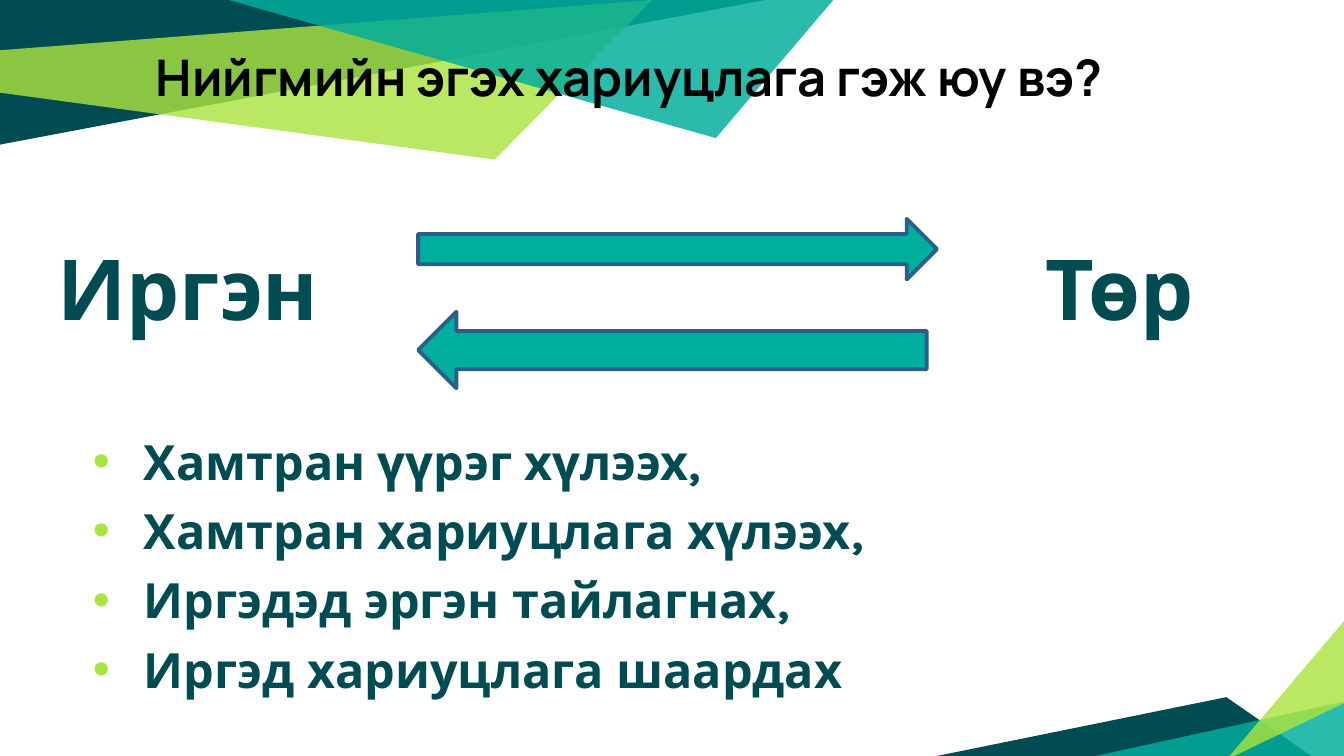
from dataclasses import dataclass

from lxml import etree
from pptx import Presentation
from pptx.dml.color import RGBColor
from pptx.enum.shapes import MSO_SHAPE
from pptx.enum.text import MSO_ANCHOR, MSO_AUTO_SIZE, PP_ALIGN
from pptx.oxml.ns import qn
from pptx.util import Pt

ARROW = MSO_SHAPE.RIGHT_ARROW
CENTER, LEFT = PP_ALIGN.CENTER, PP_ALIGN.LEFT
TOP, MIDDLE = MSO_ANCHOR.TOP, MSO_ANCHOR.MIDDLE
NO_FIT = MSO_AUTO_SIZE.NONE

COLORS = {
    "dark": "004C52",
    "teal": "00AE9D",
    "lime": "ABE33F",
    "outline": "2B5F8A",
    "black": "000000",
}


@dataclass
class Box:
    left: float
    top: float
    width: float
    height: float


@dataclass
class Facet:
    color: str
    opacity: int
    points: list


@dataclass
class Arrow:
    box: Box
    rotation: int


@dataclass
class Label:
    text: str
    box: Box


FACETS = [
    Facet("dark", 100, [(0, 0), (0, 77.5), (410, 0)]),
    Facet("lime", 81, [(-0.5, 27), (0, 49.7), (265, 85.5), (349.5, 0)]),
    Facet("dark", 100, [(502, 405), (702.5, 405), (657, 373.5)]),
    Facet("teal", 83, [(721.5, 375.5), (721.5, 407), (578, 407)]),
    Facet("lime", 81, [(721.5, 376), (721.5, 331), (657, 407)]),
    Facet("teal", 83, [(122.5, 0), (383.5, 74), (447, -0.7), (438.5, 0)]),
]
ARROWS = [
    Arrow(Box(224, 117.2, 278, 32.5), 0),
    Arrow(Box(224, 167, 272.5, 41), 180),
]
LABELS = [
    Label("Иргэн ", Box(-31, 119.5, 275, 70.5)),
    Label("Төр", Box(462.3, 119.5, 275, 70.5)),
]
DUTIES = [
    "Хамтран үүрэг хүлээх,",
    "Хамтран хариуцлага хүлээх,",
    "Иргэдэд эргэн тайлагнах,",
    "Иргэд хариуцлага шаардах",
]


def rgb(name: str) -> RGBColor:
    return RGBColor.from_string(COLORS[name])


def place(sp, box: Box) -> None:
    sp.left, sp.top = Pt(box.left), Pt(box.top)
    sp.width, sp.height = Pt(box.width), Pt(box.height)


def set_frame(tf, anchor) -> None:
    tf.word_wrap = True
    tf.auto_size = NO_FIT
    tf.vertical_anchor = anchor
    tf.margin_left = tf.margin_right = Pt(7.2)
    tf.margin_top = tf.margin_bottom = Pt(7.2)


def write(p, text: str, font: str, size: float, color: str, align) -> None:
    p.text = text
    p.alignment = align
    p.font.name, p.font.size, p.font.bold = font, Pt(size), True
    p.font.color.rgb = rgb(color)


def add_bullet(p, color: str, indent: float) -> None:
    pPr = p._p.get_or_add_pPr()
    pPr.set("marL", str(Pt(indent)))
    pPr.set("indent", str(-Pt(indent)))
    # Bullet elements precede the default run properties
    bu_clr = etree.Element(qn("a:buClr"))
    etree.SubElement(bu_clr, qn("a:srgbClr"), val=COLORS[color])
    bu_font = etree.Element(qn("a:buFont"), typeface="Arial")
    bu_char = etree.Element(qn("a:buChar"), char="•")
    def_rpr = pPr.find(qn("a:defRPr"))
    for el in (bu_clr, bu_font, bu_char):
        def_rpr.addprevious(el)


def add_facet(s, facet: Facet) -> None:
    points = [(Pt(x), Pt(y)) for x, y in facet.points]
    builder = s.shapes.build_freeform(*points[0], scale=1.0)
    builder.add_line_segments(points[1:], close=True)
    sp = builder.convert_to_shape()
    sp.shadow.inherit = False
    sp.fill.solid()
    sp.fill.fore_color.rgb = rgb(facet.color)
    sp.line.fill.background()
    if facet.opacity < 100:
        clr = sp._element.spPr.find(qn("a:solidFill"))[0]
        etree.SubElement(clr, qn("a:alpha"), val=str(facet.opacity * 1000))


def add_arrow(s, arrow: Arrow) -> None:
    b = arrow.box
    sp = s.shapes.add_shape(ARROW, Pt(b.left), Pt(b.top), Pt(b.width), Pt(b.height))
    sp.rotation = arrow.rotation
    sp.shadow.inherit = False
    sp.fill.solid()
    sp.fill.fore_color.rgb = rgb("teal")
    sp.line.color.rgb = rgb("outline")
    sp.line.width = Pt(2)


def add_label(s, label: Label) -> None:
    b = label.box
    sp = s.shapes.add_textbox(Pt(b.left), Pt(b.top), Pt(b.width), Pt(b.height))
    set_frame(sp.text_frame, TOP)
    write(sp.text_frame.paragraphs[0], label.text, "Karla", 45, "dark", CENTER)


def main() -> None:
    prs = Presentation()
    prs.slide_width, prs.slide_height = Pt(720), Pt(405)
    s = prs.slides.add_slide(prs.slide_layouts[1])
    title, body = s.shapes.title, s.placeholders[1]

    # Corner decoration, kept behind the placeholders
    for facet in FACETS:
        add_facet(s, facet)
    for sp in (title, body):
        s.shapes._spTree.append(sp._element)

    # Title
    place(title, Box(49.7, 19.5, 580, 43))
    set_frame(title.text_frame, MIDDLE)
    write(title.text_frame.paragraphs[0], "Нийгмийн эгэх хариуцлага гэж юу вэ? ",
          "Manrope", 27, "black", CENTER)

    # Duties list
    place(body, Box(42.5, 224, 652, 140.5))
    tf = body.text_frame
    set_frame(tf, TOP)
    for i, duty in enumerate(DUTIES):
        p = tf.add_paragraph() if i else tf.paragraphs[0]
        write(p, duty, "Karla", 26, "dark", LEFT)
        p.space_before = Pt(6)
        add_bullet(p, "lime", 27.4)

    # Exchange between citizen and state
    for arrow in ARROWS:
        add_arrow(s, arrow)
    for label in LABELS:
        add_label(s, label)

    prs.save("out.pptx")


if __name__ == "__main__":
    main()
